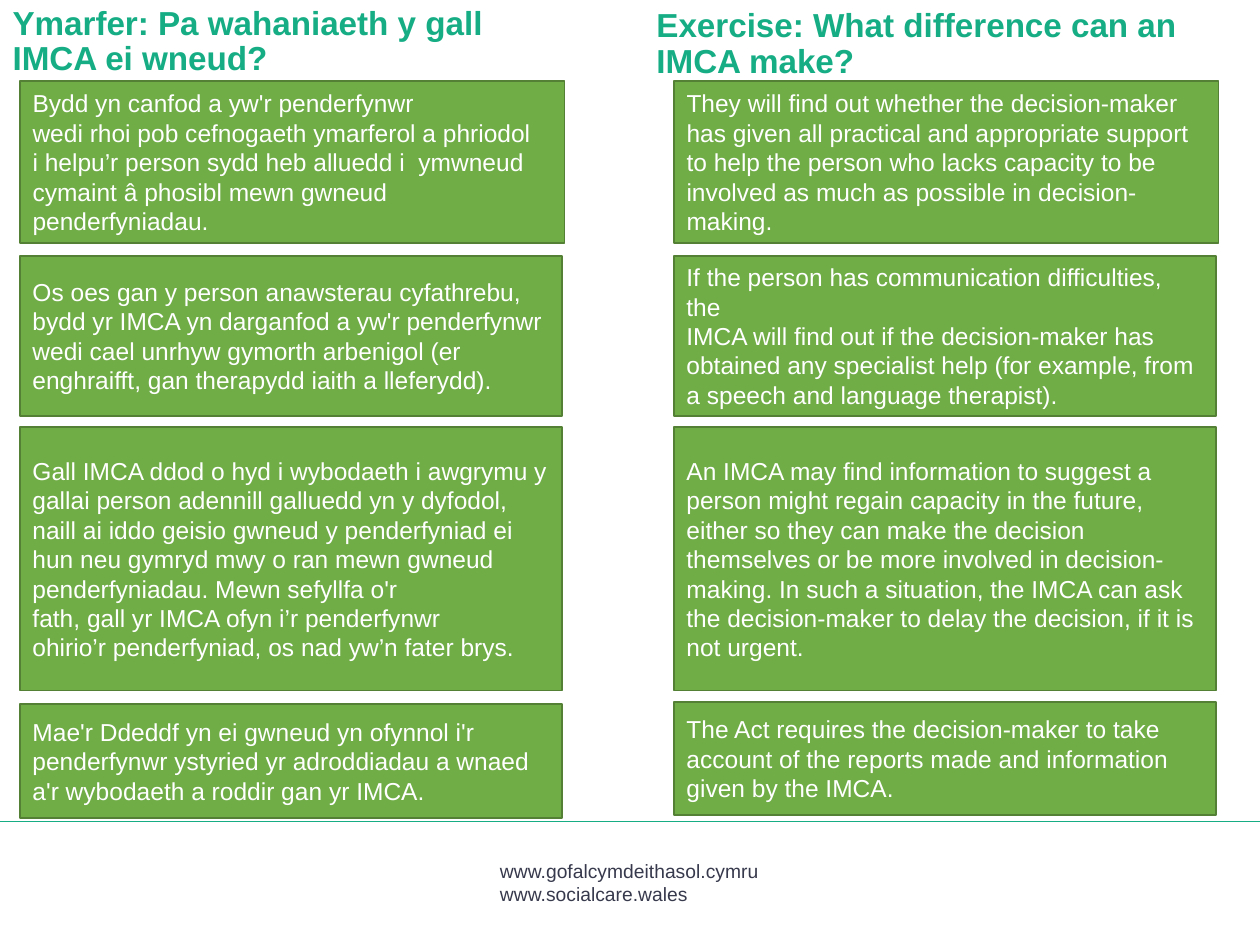
from dataclasses import dataclass

import pptx
import pptx.dml.color
import pptx.enum.shapes
import pptx.enum.text
import pptx.oxml.ns
import pptx.util
from lxml import etree

Inches = pptx.util.Inches
Pt = pptx.util.Pt
ANCHOR = pptx.enum.text.MSO_ANCHOR


@dataclass(frozen=True)
class Theme:
    font: str = "Arial"
    teal: str = "16AD85"
    green: str = "70AD47"
    dark_green: str = "538035"
    white: str = "FFFFFF"
    slate: str = "37394C"
    heading_size: int = 19
    panel_size: int = 14
    footer_size: int = 11


THEME = Theme()

# Top and height of each row of panels, and how much wider than PANEL_WIDTH it is
ROWS = [(0.64, 1.29, 0.02), (2.03, 1.27, 0), (3.39, 2.09, 0), (5.57, 0.9, 0)]
PANEL_WIDTH = 4.3

WELSH = [
    ["Bydd yn canfod a yw'r penderfynwr",
     "wedi rhoi pob cefnogaeth ymarferol a phriodol",
     "i helpu’r person sydd heb alluedd i  ymwneud cymaint â phosibl mewn "
     "gwneud penderfyniadau."],
    ["Os oes gan y person anawsterau cyfathrebu, bydd yr IMCA yn darganfod a "
     "yw'r penderfynwr wedi cael unrhyw gymorth arbenigol (er enghraifft, gan "
     "therapydd iaith a lleferydd)."],
    ["Gall IMCA ddod o hyd i wybodaeth i awgrymu y",
     "gallai person adennill galluedd yn y dyfodol, naill ai iddo geisio gwneud "
     "y penderfyniad ei hun neu gymryd mwy o ran mewn gwneud penderfyniadau. "
     "Mewn sefyllfa o'r",
     "fath, gall yr IMCA ofyn i’r penderfynwr",
     "ohirio’r penderfyniad, os nad yw’n fater brys."],
    ["Mae'r Ddeddf yn ei gwneud yn ofynnol i'r penderfynwr ystyried yr "
     "adroddiadau a wnaed a'r wybodaeth a roddir gan yr IMCA."],
]

ENGLISH = [
    ["They will find out whether the decision-maker",
     "has given all practical and appropriate support",
     "to help the person who lacks capacity to be",
     "involved as much as possible in decision-making."],
    ["If the person has communication difficulties, the",
     "IMCA will find out if the decision-maker has",
     "obtained any specialist help (for example, from",
     "a speech and language therapist)."],
    ["An IMCA may find information to suggest a",
     "person might regain capacity in the future, either so they can make the "
     "decision themselves or be more involved in decision-making. In such a "
     "situation, the IMCA can ask the decision-maker to delay the decision, "
     "if it is not urgent."],
    ["The Act requires the decision-maker to take",
     "account of the reports made and information",
     "given by the IMCA."],
]


def rgb(value):
    return pptx.dml.color.RGBColor.from_string(value)


def write(frame, paragraphs, *, size, color, bold=False, anchor=ANCHOR.TOP,
          line_spacing=1.0):
    frame.word_wrap = True
    frame.auto_size = pptx.enum.text.MSO_AUTO_SIZE.NONE
    frame.vertical_anchor = anchor
    for number, wording in enumerate(paragraphs):
        paragraph = frame.add_paragraph() if number else frame.paragraphs[0]
        paragraph.text = wording
        paragraph.alignment = pptx.enum.text.PP_ALIGN.LEFT
        paragraph.line_spacing = line_spacing
        paragraph.space_before = Pt(0)
        font = paragraph.font
        font.name, font.size, font.bold = THEME.font, Pt(size), bold
        font.color.rgb = rgb(color)


def place(shape, left, top, width, height):
    shape.left, shape.top = Inches(left), Inches(top)
    shape.width, shape.height = Inches(width), Inches(height)


def add_heading(placeholder, wording, box):
    place(placeholder, *box)
    write(placeholder.text_frame, [wording], size=THEME.heading_size,
          color=THEME.teal, bold=True, line_spacing=0.9)


def add_panel(slide, paragraphs, left, top, width, height):
    panel = slide.shapes.add_shape(
        pptx.enum.shapes.MSO_SHAPE.RECTANGLE,
        Inches(left), Inches(top), Inches(width), Inches(height))
    panel.shadow.inherit = False
    panel.fill.solid()
    panel.fill.fore_color.rgb = rgb(THEME.green)
    panel.line.color.rgb = rgb(THEME.dark_green)
    panel.line.width = Pt(1)
    write(panel.text_frame, paragraphs, size=THEME.panel_size,
          color=THEME.white, anchor=ANCHOR.MIDDLE)


def add_language_column(slide, panels, left, last_drop=0):
    """Stack the panels of one language; last_drop lowers the final one."""
    for paragraphs, (top, height, extra) in zip(panels, ROWS):
        drop = last_drop if paragraphs is panels[-1] else 0
        add_panel(slide, paragraphs, left, top + drop, PANEL_WIDTH + extra, height)


def add_footer(slide, left, top, width, height):
    """Draw the rule across the slide at top, with the addresses below it."""
    rule = slide.shapes.add_connector(
        pptx.enum.shapes.MSO_CONNECTOR.STRAIGHT,
        Inches(left), Inches(top), Inches(left + width), Inches(top))
    rule.line.color.rgb = rgb(THEME.teal)
    rule.line.width = Pt(1)
    etree.SubElement(rule._element.spPr, pptx.oxml.ns.qn("a:effectLst"))

    address_width = 2.26
    addresses = slide.shapes.add_textbox(
        Inches(left + (width - address_width) / 2), Inches(top + 0.25),
        Inches(address_width), Inches(height - 0.52))
    write(addresses.text_frame,
          ["www.gofalcymdeithasol.cymru", "www.socialcare.wales"],
          size=THEME.footer_size, color=THEME.slate)


def main():
    deck = pptx.Presentation()
    deck.slide_width, deck.slide_height = Inches(10), Inches(7.5)
    comparison = deck.slide_layouts.get_by_name("Comparison")
    slide = deck.slides.add_slide(comparison)

    headings = {
        1: ("Ymarfer: Pa wahaniaeth y gall IMCA ei wneud?", (0, 0, 4.46, 6.49)),
        3: ("Exercise: What difference can an IMCA make?", (5.11, 0.02, 4.8, 6.49)),
    }
    for placeholder in list(slide.placeholders):
        index = placeholder.placeholder_format.idx
        if index in headings:
            add_heading(placeholder, *headings[index])
        else:
            placeholder._element.getparent().remove(placeholder._element)

    add_footer(slide, 0, 6.52, 10, 0.98)
    add_language_column(slide, ENGLISH, 5.35)
    add_language_column(slide, WELSH, 0.16, last_drop=0.02)
    deck.save("out.pptx")


if __name__ == "__main__":
    main()
